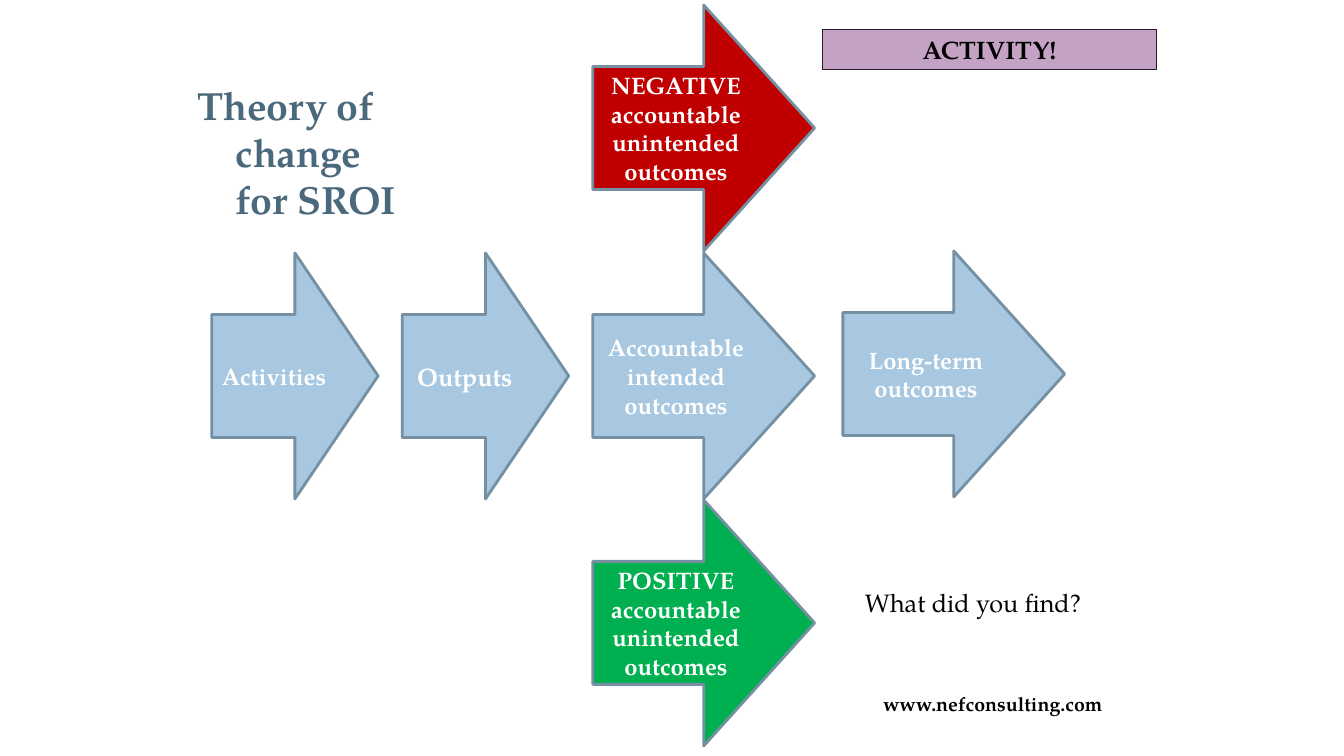
from dataclasses import dataclass

import pptx
import pptx.dml.color
import pptx.enum.shapes
import pptx.enum.text
import pptx.util
from pptx.util import Inches

FONT = "TeX Gyre Pagella"
COLORS = {
    "blue": "A7C8E0", "green": "00B050", "red": "C00000", "edge": "7590A3",
    "mauve": "C4A2C4", "mauve_edge": "271927", "title": "4B697C",
    "white": "FFFFFF", "black": "000000",
}
ALIGN = pptx.enum.text.PP_ALIGN
ANCHOR = pptx.enum.text.MSO_ANCHOR
SHAPE = pptx.enum.shapes.MSO_SHAPE


@dataclass
class Block:
    text: str
    left: float
    top: float
    width: float
    height: float
    fill: str = "blue"
    size: float = 17
    shape: SHAPE = SHAPE.RIGHT_ARROW
    line: str = "edge"
    line_width: float = 2
    color: str = "white"


@dataclass
class Label:
    text: str
    left: float
    top: float
    width: float
    height: float
    size: float
    bold: bool = True
    color: str = "black"
    hanging: float = 0


def rgb(name: str) -> pptx.dml.color.RGBColor:
    return pptx.dml.color.RGBColor.from_string(COLORS[name])


def write(tf, text: str, size: float, color: str, bold: bool):
    tf.word_wrap = True
    p = tf.paragraphs[0]
    p.text = text
    p.font.name = FONT
    p.font.size = pptx.util.Pt(size)
    p.font.bold = bold
    p.font.color.rgb = rgb(color)
    return p


def add_block(s, b: Block) -> None:
    sp = s.shapes.add_shape(b.shape, Inches(b.left), Inches(b.top),
                            Inches(b.width), Inches(b.height))
    sp.shadow.inherit = False
    sp.fill.solid()
    sp.fill.fore_color.rgb = rgb(b.fill)
    sp.line.color.rgb = rgb(b.line)
    sp.line.width = pptx.util.Pt(b.line_width)
    sp.text_frame.vertical_anchor = ANCHOR.MIDDLE
    p = write(sp.text_frame, b.text, b.size, b.color, True)
    p.alignment = ALIGN.CENTER


def add_label(s, b: Label) -> None:
    sp = s.shapes.add_textbox(Inches(b.left), Inches(b.top),
                              Inches(b.width), Inches(b.height))
    p = write(sp.text_frame, b.text, b.size, b.color, b.bold)
    if b.hanging:
        pPr = p._p.get_or_add_pPr()
        pPr.set("marL", str(Inches(b.hanging)))
        pPr.set("indent", str(-Inches(b.hanging)))


# Arrow grid: narrow and wide arrows, outcomes stacked in one column
NARROW, WIDE, HEIGHT = 1.65, 2.2, 2.44
ROW, OUTCOME_X = 2.51, 5.88
STEP = 1.89

BLOCKS = [
    Block("Activities", OUTCOME_X - 2 * STEP, ROW, NARROW, HEIGHT),
    Block("Outputs", OUTCOME_X - STEP, ROW, NARROW, HEIGHT, size=18),
    Block("Accountable intended outcomes", OUTCOME_X, ROW, WIDE, HEIGHT),
    Block("POSITIVE accountable unintended outcomes",
          OUTCOME_X, 4.96, WIDE, HEIGHT, "green"),
    Block("NEGATIVE accountable unintended outcomes",
          OUTCOME_X, 0.05, WIDE, HEIGHT, "red"),
    Block("Long-term outcomes", 8.36, 2.49, WIDE, HEIGHT),
    Block("ACTIVITY!", 8.16, 0.29, 3.31, 0.4, "mauve", 18,
          SHAPE.RECTANGLE, "mauve_edge", 0.75, "black"),
]
LABELS = [
    Label("Theory of change for SROI", 1.86, 0.76, 2.36, 1.81, 28,
          color="title", hanging=0.38),
    Label("What did you find?", 8.48, 5.78, 2.76, 0.4, 18, bold=False),
    Label("www.nefconsulting.com", 8.66, 6.82, 3.88, 0.34, 14),
]


def main() -> None:
    prs = pptx.Presentation()
    prs.slide_width, prs.slide_height = Inches(13.33), Inches(7.5)
    s = prs.slides.add_slide(prs.slide_layouts[6])
    # Arrows and activity banner
    for block in BLOCKS:
        add_block(s, block)
    # Title, question and web address
    for label in LABELS:
        add_label(s, label)
    prs.save("out.pptx")


if __name__ == "__main__":
    main()
